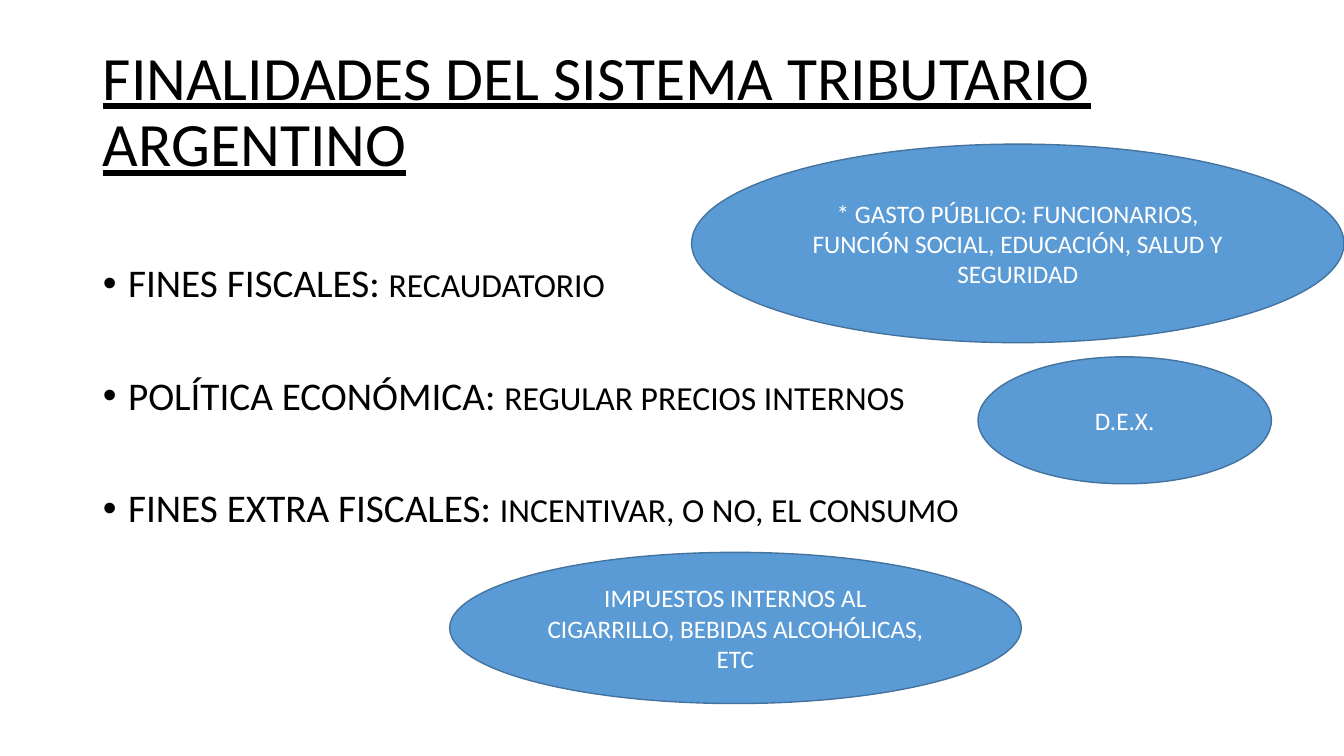
from pptx import Presentation
from pptx.dml.color import RGBColor as Rgb
from pptx.enum.shapes import MSO_SHAPE as Preset
from pptx.enum.text import MSO_ANCHOR as Anchor, MSO_AUTO_SIZE as AutoSize, PP_ALIGN as Align
from pptx.util import Inches, Pt

WIDTH, HEIGHT = 13.33, 7.5
FONT = "Calibri"
COLORS = {"text": "000000", "bubble": "5B9BD5", "outline": "43739E", "bubble_text": "FFFFFF"}

AIMS = [
    ("FINES FISCALES: ", "RECAUDATORIO"),
    ("POLÍTICA ECONÓMICA: ", "REGULAR PRECIOS INTERNOS"),
    ("FINES EXTRA FISCALES: ", "INCENTIVAR, O NO, EL CONSUMO"),
]

# Left, top, width and height in inches
EXAMPLES = [
    ("* GASTO PÚBLICO: FUNCIONARIOS, FUNCIÓN SOCIAL, EDUCACIÓN, SALUD Y SEGURIDAD",
     (6.86, 1.43, 6.47, 1.97)),
    ("D.E.X.", (9.7, 3.54, 2.91, 1.26)),
    ("IMPUESTOS INTERNOS AL CIGARRILLO, BEBIDAS ALCOHÓLICAS, ETC",
     (4.46, 5.48, 5.67, 1.5)),
]


def color(name):
    return Rgb.from_string(COLORS[name])


def write(paragraph, text, size, ink="text", underline=None):
    run = paragraph.add_run()
    run.text = text
    run.font.name = FONT
    run.font.size = Pt(size)
    run.font.color.rgb = color(ink)
    run.font.underline = underline


def place(holder, left, top, width, height, anchor):
    holder.left, holder.top = Inches(left), Inches(top)
    holder.width, holder.height = Inches(width), Inches(height)
    frame = holder.text_frame
    frame.word_wrap = True
    frame.auto_size = AutoSize.NONE
    frame.vertical_anchor = anchor
    return frame


def add_title(slide, text):
    frame = place(slide.shapes.title, 0.92, 0.4, 11.5, 1.45, Anchor.MIDDLE)
    heading = frame.paragraphs[0]
    heading.alignment = Align.LEFT
    heading.line_spacing = 0.9
    write(heading, text, 44, underline=True)


def add_aims(slide, aims):
    frame = place(slide.placeholders[1], 0.92, 2, 11.5, 4.76, Anchor.TOP)
    frame.margin_top = Inches(0.62)
    for index, (aim, purpose) in enumerate(aims):
        bullet = frame.add_paragraph() if index else frame.paragraphs[0]
        bullet.line_spacing = 0.9
        bullet.space_before = Pt(50 if index else 0)
        # Hanging indent of a quarter inch
        props = bullet._p.get_or_add_pPr()
        props.set("marL", str(Inches(0.25)))
        props.set("indent", str(-Inches(0.25)))
        write(bullet, aim, 28)
        write(bullet, purpose, 24)


def add_bubble(slide, text, box):
    bubble = slide.shapes.add_shape(Preset.OVAL, *map(Inches, box))
    bubble.shadow.inherit = False
    bubble.fill.solid()
    bubble.fill.fore_color.rgb = color("bubble")
    bubble.line.color.rgb = color("outline")
    bubble.line.width = Pt(1)
    frame = bubble.text_frame
    frame.word_wrap = True
    frame.vertical_anchor = Anchor.MIDDLE
    frame.paragraphs[0].alignment = Align.CENTER
    write(frame.paragraphs[0], text, 18, ink="bubble_text")


def main():
    deck = Presentation()
    deck.slide_width, deck.slide_height = Inches(WIDTH), Inches(HEIGHT)
    slide = deck.slides.add_slide(deck.slide_layouts[1])

    # Heading and list of aims
    add_title(slide, "FINALIDADES DEL SISTEMA TRIBUTARIO ARGENTINO")
    add_aims(slide, AIMS)

    # One example beside each aim
    for text, box in EXAMPLES:
        add_bubble(slide, text, box)

    deck.save("out.pptx")


if __name__ == "__main__":
    main()
